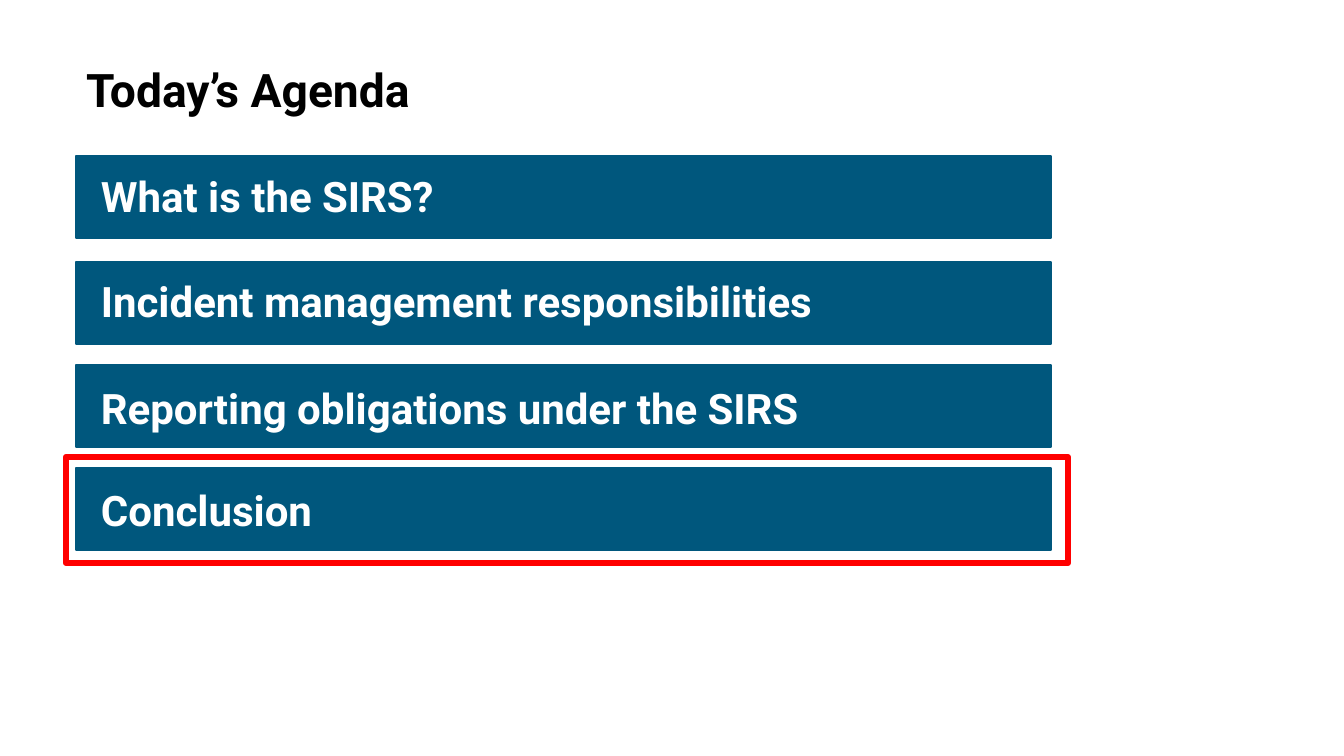
from pptx import Presentation
from pptx.dml.color import RGBColor
from pptx.enum.shapes import MSO_SHAPE
from pptx.enum.text import MSO_ANCHOR, MSO_AUTO_SIZE, PP_ALIGN
from pptx.util import Emu, Pt

RECTANGLE = MSO_SHAPE.RECTANGLE
LEFT = PP_ALIGN.LEFT
TOP, MIDDLE = MSO_ANCHOR.TOP, MSO_ANCHOR.MIDDLE
GROW, FIXED = MSO_AUTO_SIZE.SHAPE_TO_FIT_TEXT, MSO_AUTO_SIZE.NONE

BLACK = RGBColor(0x00, 0x00, 0x00)
WHITE = RGBColor(0xFF, 0xFF, 0xFF)
BLUE = RGBColor(0x00, 0x57, 0x7D)
RED = RGBColor(0xFF, 0x00, 0x00)

EMU_PER_PX = 914400 / 100.8
TITLE_ONLY = 5


def px(length):
    return Emu(round(length * EMU_PER_PX))


class AgendaSlide:
    font_name = "Roboto"

    def __init__(self, deck):
        self.page = deck.slides.add_slide(deck.slide_layouts[TITLE_ONLY])

    def fill_text(self, frame, text, size, color, anchor, fit):
        frame.word_wrap = True
        frame.auto_size = fit
        frame.vertical_anchor = anchor
        para = frame.paragraphs[0]
        para.alignment = LEFT
        span = para.add_run()
        span.text = text
        span.font.name = self.font_name
        span.font.size = Pt(size)
        span.font.bold = True
        span.font.color.rgb = color
        return para

    def title(self, text, left, top, width, height):
        box = self.page.shapes.title
        box.left, box.top = px(left), px(top)
        box.width, box.height = px(width), px(height)
        para = self.fill_text(box.text_frame, text, 33, BLACK, MIDDLE, FIXED)
        para.line_spacing = 0.9

    def rectangle(self, left, top, width, height, line, weight, fill=None):
        box = self.page.shapes.add_shape(
            RECTANGLE, px(left), px(top), px(width), px(height))
        box.shadow.inherit = False
        if fill is None:
            box.fill.background()
        else:
            box.fill.solid()
            box.fill.fore_color.rgb = fill
        box.line.color.rgb = line
        box.line.width = Pt(weight)

    def label(self, text, left, top, width, height):
        box = self.page.shapes.add_textbox(
            px(left), px(top), px(width), px(height))
        self.fill_text(box.text_frame, text, 30, WHITE, TOP, GROW)


# Agenda items: text, top of the bar, top of the label
AGENDA = [
    ("What is the SIRS?", 156, 166),
    ("Incident management responsibilities", 262, 271),
    ("Reporting obligations under the SIRS", 365, 378),
    ("Conclusion", 468, 480),
]


def main():
    deck = Presentation()
    deck.slide_width, deck.slide_height = px(1344), px(756)
    slide = AgendaSlide(deck)

    # Heading
    slide.title("Today’s Agenda", 76, 21, 1157, 143)

    # Agenda bars with their labels
    for text, bar_top, label_top in AGENDA:
        slide.rectangle(76, bar_top, 975, 82, BLUE, 1, fill=BLUE)
        slide.label(text, 91, label_top, 975, 61)

    # Frame around the current item
    slide.rectangle(66, 457, 1002, 106, RED, 4.5)

    deck.save("out.pptx")


if __name__ == "__main__":
    main()
